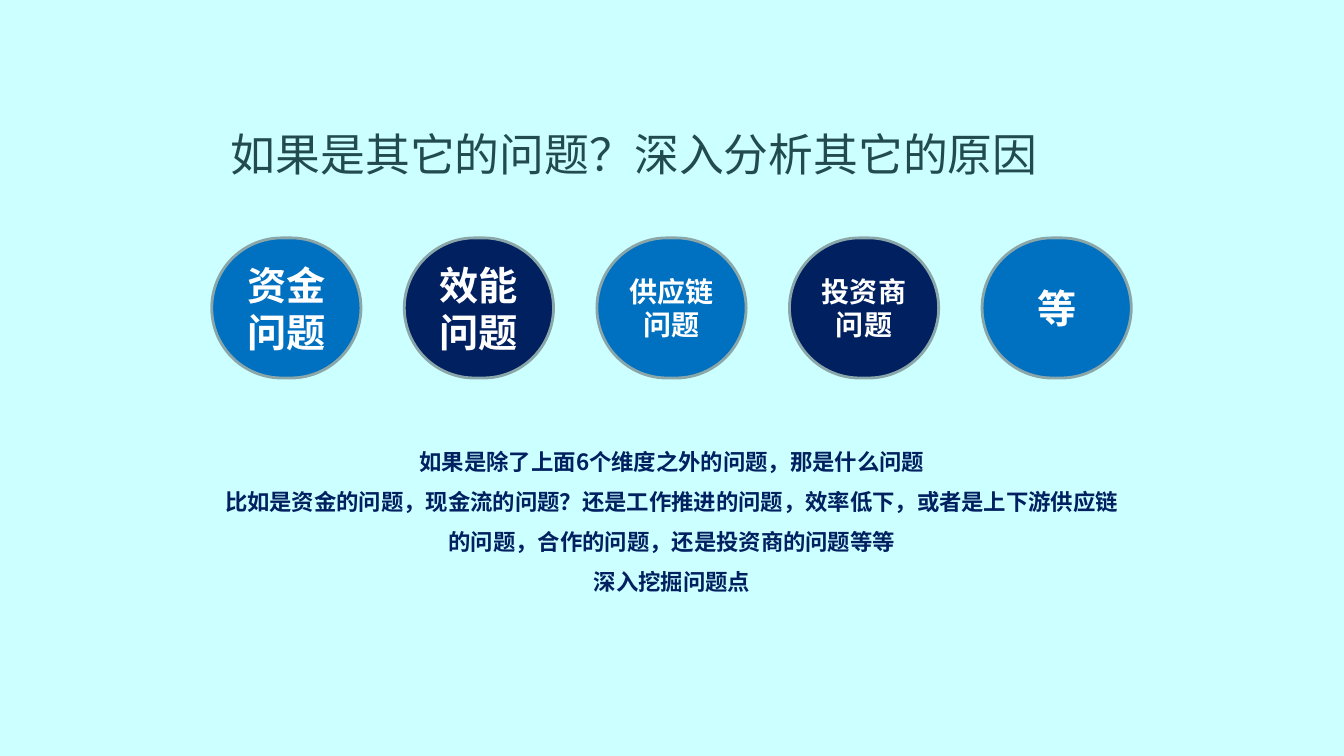
import pptx
import pptx.util
import pptx.dml.color
import pptx.enum.shapes
import pptx.enum.text
import pptx.oxml.ns
import lxml.etree

Inches = pptx.util.Inches
RGBColor = pptx.dml.color.RGBColor
Align = pptx.enum.text.PP_ALIGN

FONT = "Noto Sans CJK SC"
PALE = RGBColor(0xCC, 0xFF, 0xFF)
TEAL = RGBColor(0x22, 0x4B, 0x50)
GREY = RGBColor(0x8A, 0xA6, 0xA8)
BLUE = RGBColor(0x00, 0x70, 0xC0)
NAVY = RGBColor(0x00, 0x20, 0x60)
WHITE = RGBColor(0xFF, 0xFF, 0xFF)


def add_run(p, text, size, color, bold=False):
    """Add a run whose Latin and East Asian fonts are both FONT."""
    r = p.add_run()
    r.text = text
    r.font.size = pptx.util.Pt(size)
    r.font.bold = bold
    r.font.color.rgb = color
    r.font.name = FONT
    ea = lxml.etree.SubElement(r._r.get_or_add_rPr(), pptx.oxml.ns.qn("a:ea"))
    ea.set("typeface", FONT)


prs = pptx.Presentation()
prs.slide_width = Inches(13.33)
prs.slide_height = Inches(7.5)
s = prs.slides.add_slide(prs.slide_layouts[6])
s.background.fill.solid()
s.background.fill.fore_color.rgb = PALE

# Title
sp = s.shapes.add_textbox(Inches(2.19), Inches(1.21), Inches(8.23), Inches(0.64))
tf = sp.text_frame
tf.word_wrap = False
tf.auto_size = pptx.enum.text.MSO_AUTO_SIZE.SHAPE_TO_FIT_TEXT
add_run(tf.paragraphs[0], "如果是其它的问题？深入分析其它的原因", 32, TEAL)

# Row of problem types, in alternating colours
LEFT, PITCH = 2.1, 1.91
problems = [("资金问题", 28), ("效能问题", 28), ("供应链问题", 20), ("投资商问题", 20), ("等", 28)]
for i, (label, size) in enumerate(problems):
    sp = s.shapes.add_shape(pptx.enum.shapes.MSO_SHAPE.ROUNDED_RECTANGLE,
                            Inches(LEFT + i * PITCH), Inches(2.36), Inches(1.48), Inches(1.39))
    sp.adjustments[0] = 0.5
    sp.shadow.inherit = False
    sp.fill.solid()
    sp.fill.fore_color.rgb = (BLUE, NAVY)[i % 2]
    sp.line.color.rgb = GREY
    sp.line.width = pptx.util.Pt(2)
    tf = sp.text_frame
    tf.word_wrap = True
    tf.vertical_anchor = pptx.enum.text.MSO_ANCHOR.MIDDLE
    p = tf.paragraphs[0]
    p.alignment = Align.CENTER
    add_run(p, label, size, WHITE, True)

# Explanation
sp = s.shapes.add_textbox(Inches(2.09), Inches(4.26), Inches(9.15), Inches(1.67))
tf = sp.text_frame
tf.word_wrap = True
tf.auto_size = pptx.enum.text.MSO_AUTO_SIZE.SHAPE_TO_FIT_TEXT
explanation = [
    "如果是除了上面6个维度之外的问题，那是什么问题",
    "比如是资金的问题，现金流的问题？还是工作推进的问题，效率低下，或者是上下游供应链的问题，"
    "合作的问题，还是投资商的问题等等",
    "深入挖掘问题点",
]
for i, text in enumerate(explanation):
    p = tf.add_paragraph() if i else tf.paragraphs[0]
    p.alignment = Align.CENTER
    p.line_spacing = 1.5
    add_run(p, text, 16, NAVY, True)

prs.save("out.pptx")
